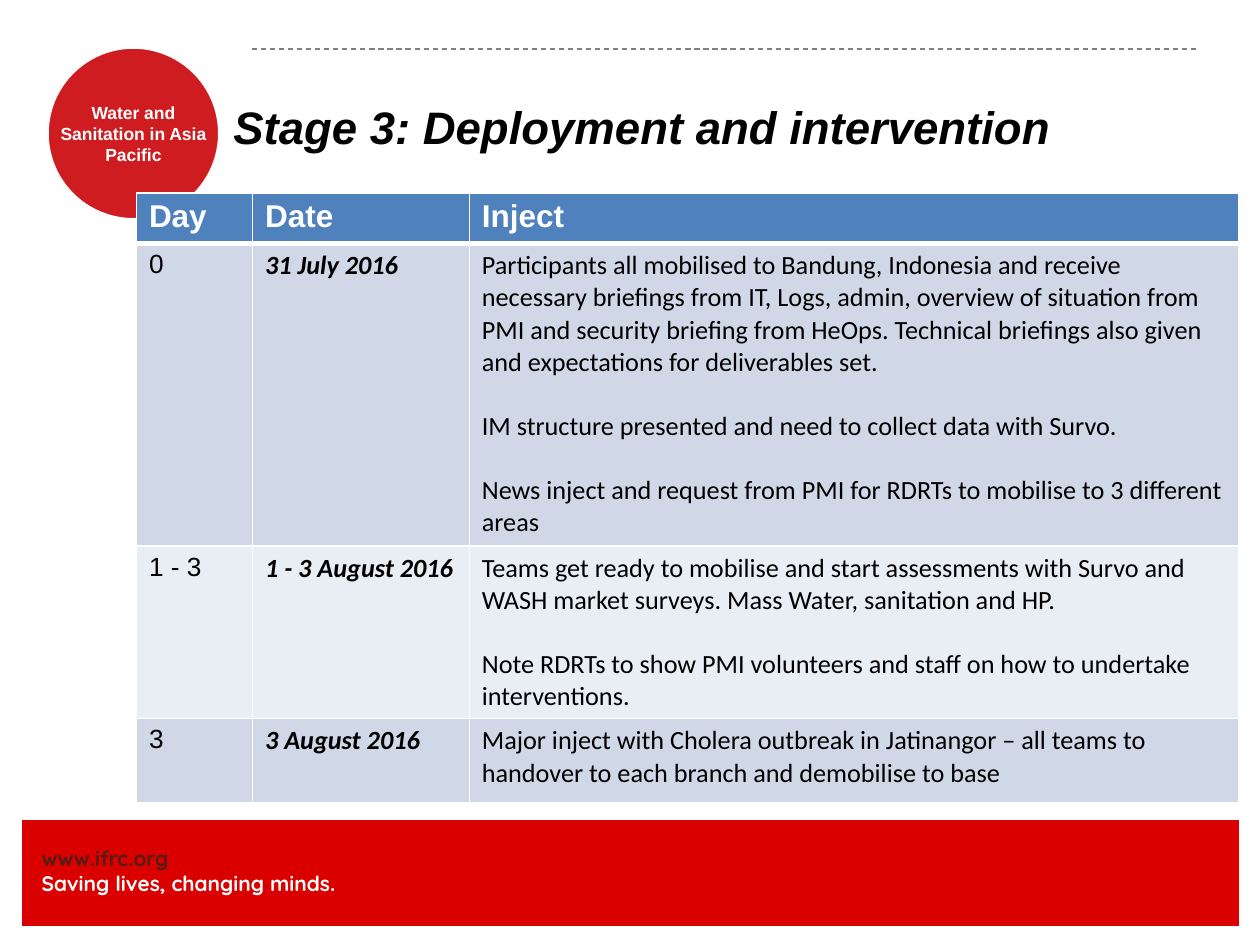
import pptx
import pptx.dml.color
import pptx.enum.dml
import pptx.enum.shapes
import pptx.enum.text
import pptx.oxml
import pptx.oxml.ns
import pptx.util

Cm = pptx.util.Cm
Pt = pptx.util.Pt
RGBColor = pptx.dml.color.RGBColor
Align = pptx.enum.text.PP_ALIGN
Anchor = pptx.enum.text.MSO_ANCHOR
Shape = pptx.enum.shapes.MSO_SHAPE

WHITE = RGBColor(0xFF, 0xFF, 0xFF)
BLACK = RGBColor(0, 0, 0)
GRAY = RGBColor(0x80, 0x80, 0x80)
FOOTER_RED = RGBColor(0xDB, 0, 0)
BADGE_RED = RGBColor(0xCF, 0x1C, 0x21)
BROWN = RGBColor(0x55, 0x1C, 0x15)
HEADER_BLUE = RGBColor(0x4F, 0x81, 0xBD)
BANDS = [RGBColor(0xD0, 0xD8, 0xE8), RGBColor(0xE9, 0xED, 0xF4)]

TITLE = "Stage 3: Deployment and intervention"
BADGE = "Water and Sanitation in Asia Pacific"
FOOTER = [("www.ifrc.org", BROWN), ("Saving lives, changing minds.", WHITE)]
HEADER = ["Day", "Date", "Inject"]
SCHEDULE = [
    ("0", "31 July 2016", [
        "Participants all mobilised to Bandung, Indonesia and receive necessary "
        "briefings from IT, Logs, admin, overview of situation from PMI and security "
        "briefing from HeOps. Technical briefings also given and expectations for "
        "deliverables set.",
        "IM structure presented and need to collect data with Survo.",
        "News inject and request from PMI for RDRTs to mobilise to 3 different areas",
    ]),
    ("1 - 3", "1 - 3 August 2016", [
        "Teams get ready to mobilise and start assessments with Survo and WASH market "
        "surveys. Mass Water, sanitation and HP.",
        "Note RDRTs to show PMI volunteers and staff on how to undertake interventions.",
    ]),
    ("3", "3 August 2016", [
        "Major inject with Cholera outbreak in Jatinangor – all teams to handover to "
        "each branch and demobilise to base",
    ]),
]
COLUMN_WIDTHS = [2.34, 4.37, 15.52]
ROW_HEIGHTS = [0.99, 6.1, 3.48, 1.7]
COLUMN_STYLES = [("Arial", False), ("Calibri", True), ("Calibri", False)]


def format_font(paragraph, name, size, color, bold=False, italic=False):
    for span in paragraph.runs:
        span.font.name = name
        span.font.size = Pt(size)
        span.font.color.rgb = color
        span.font.bold = bold
        span.font.italic = italic


def add_filled(page, kind, place, color, line_width):
    shape = page.shapes.add_shape(kind, *map(Cm, place))
    shape.shadow.inherit = False
    shape.fill.solid()
    shape.fill.fore_color.rgb = color
    shape.line.color.rgb = WHITE
    shape.line.width = Pt(line_width)


def add_text_box(page, place, lines):
    frame = page.shapes.add_textbox(*map(Cm, place)).text_frame
    frame.word_wrap = True
    frame.margin_left = frame.margin_right = frame.margin_top = frame.margin_bottom = 0
    frame.text = "\n".join(lines)
    return frame.paragraphs


def set_borders(cell, bottom_width):
    properties = cell._tc.get_or_add_tcPr()
    for side, width in zip("LRTB", (1, 1, 1, bottom_width)):
        properties.append(pptx.oxml.parse_xml(
            f'<a:ln{side} {pptx.oxml.ns.nsdecls("a")} w="{Pt(width)}">'
            f'<a:solidFill><a:srgbClr val="{WHITE}"/></a:solidFill></a:ln{side}>'))


def fill_cell(cell, lines, background, bottom_width, **style):
    set_borders(cell, bottom_width)
    cell.fill.solid()
    cell.fill.fore_color.rgb = background
    cell.text_frame.text = "\n".join(lines)
    for index, paragraph in enumerate(cell.text_frame.paragraphs):
        if index:
            paragraph.space_before = Pt(18.3)
        format_font(paragraph, **style)


def add_schedule(page):
    table = page.shapes.add_table(
        len(ROW_HEIGHTS), len(COLUMN_WIDTHS), Cm(2.75), Cm(3.89),
        Cm(sum(COLUMN_WIDTHS)), Cm(sum(ROW_HEIGHTS))).table
    for column, width in zip(table.columns, COLUMN_WIDTHS):
        column.width = Cm(width)
    for row, height in zip(table.rows, ROW_HEIGHTS):
        row.height = Cm(height)
    for cell, label in zip(table.rows[0].cells, HEADER):
        fill_cell(cell, [label], HEADER_BLUE, 3,
                  name="Arial", size=18, color=WHITE, bold=True)
    for index, (day, date, injects) in enumerate(SCHEDULE):
        cells = table.rows[index + 1].cells
        for cell, lines, (name, strong) in zip(cells, ([day], [date], injects), COLUMN_STYLES):
            fill_cell(cell, lines, BANDS[index % 2], 1,
                      name=name, size=15, color=BLACK, bold=strong, italic=strong)


def main():
    deck = pptx.Presentation()
    deck.slide_width = Cm(25.4)
    deck.slide_height = Cm(19.05)
    page = deck.slides.add_slide(deck.slide_layouts[5])

    add_filled(page, Shape.RECTANGLE, (0.43, 16.51, 24.56, 2.18), FOOTER_RED, 0.75)
    lines = [text for text, color in FOOTER]
    for paragraph, (text, color) in zip(add_text_box(page, (0.84, 17.04, 8.69, 1.02), lines), FOOTER):
        format_font(paragraph, "Quicksand", 12, color, bold=True)

    add_filled(page, Shape.OVAL, (0.94, 0.94, 3.5, 3.5), BADGE_RED, 2.5)
    label = add_text_box(page, (1.1, 2.06, 3.18, 1.3), [BADGE])[0]
    label.alignment = Align.CENTER
    format_font(label, "Arial", 10, WHITE, bold=True)

    rule = page.shapes.add_connector(
        pptx.enum.shapes.MSO_CONNECTOR.STRAIGHT, Cm(5.08), Cm(0.99), Cm(24.13), Cm(0.99))
    rule.line.color.rgb = GRAY
    rule.line.width = Pt(0.75)
    rule.line.dash_style = pptx.enum.dml.MSO_LINE.DASH
    rule._element.spPr.append(pptx.oxml.parse_xml(
        f'<a:effectLst {pptx.oxml.ns.nsdecls("a")}/>'))

    title = page.shapes.title
    title.left, title.top, title.width, title.height = map(Cm, (4.45, 1.04, 19.69, 3))
    title.text_frame.text = TITLE
    title.text_frame.vertical_anchor = Anchor.MIDDLE
    heading = title.text_frame.paragraphs[0]
    heading.alignment = Align.LEFT
    format_font(heading, "Arial", 26, BLACK, bold=True, italic=True)

    add_schedule(page)
    deck.save("out.pptx")


if __name__ == "__main__":
    main()
